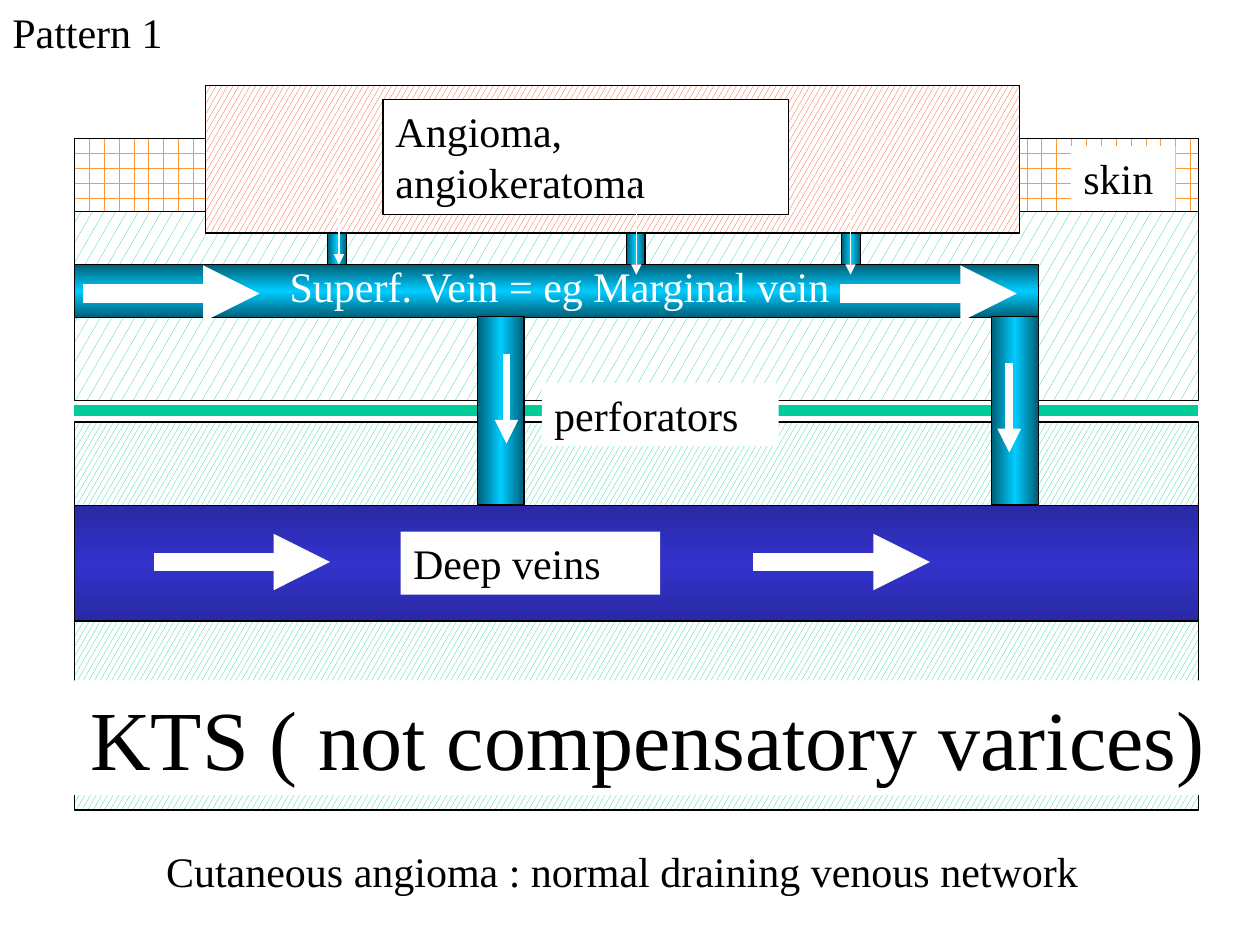
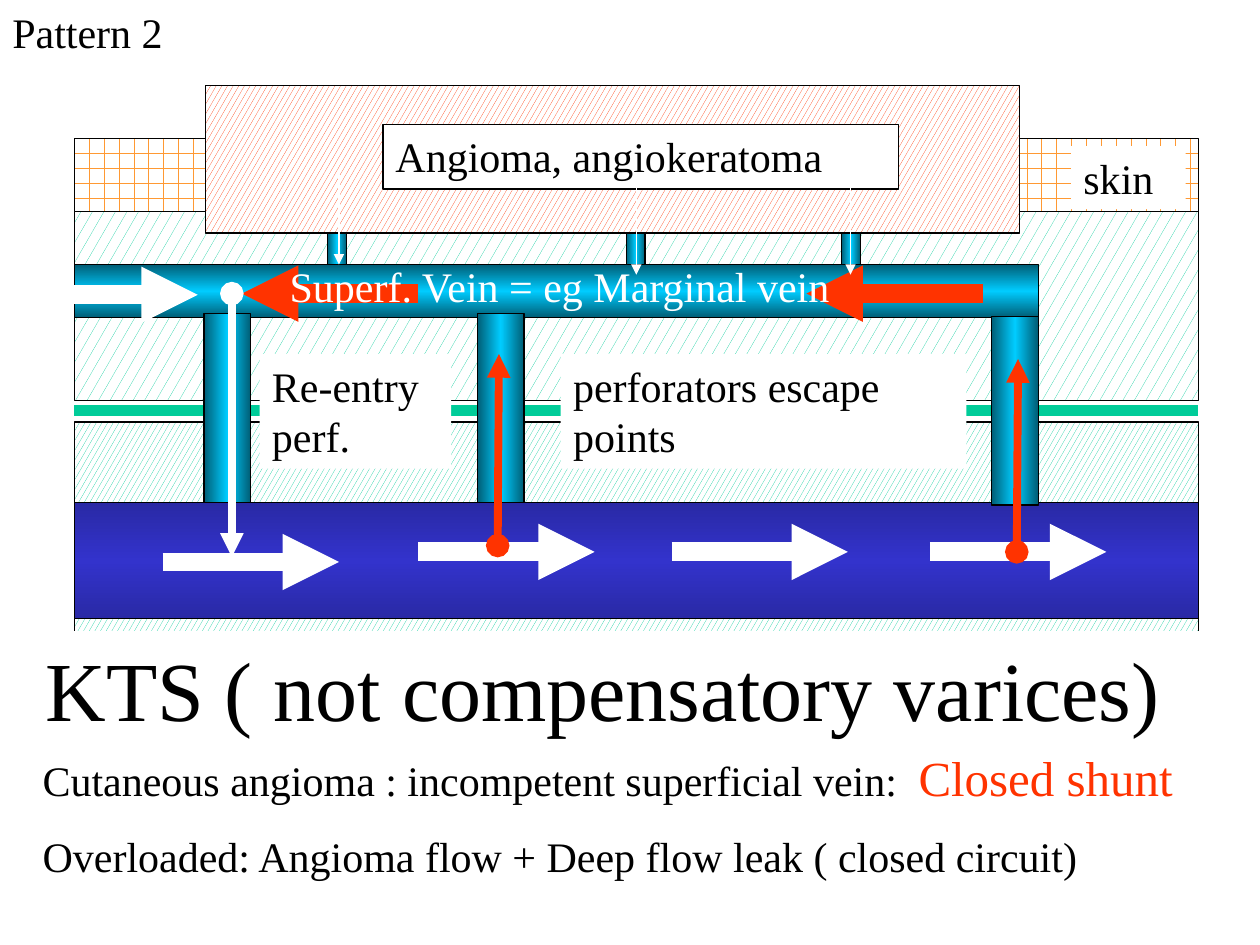
from copy import deepcopy

from lxml import etree
from pptx import Presentation
from pptx.dml.color import RGBColor
from pptx.enum.dml import MSO_PATTERN
from pptx.enum.shapes import MSO_CONNECTOR, MSO_SHAPE
from pptx.enum.text import PP_ALIGN
from pptx.oxml.ns import qn
from pptx.util import Inches, Pt

RECT = MSO_SHAPE.RECTANGLE
STRAIGHT = MSO_CONNECTOR.STRAIGHT
LARGE = MSO_PATTERN.LARGE_CONFETTI
SMALL = MSO_PATTERN.SMALL_CONFETTI
BRICK = MSO_PATTERN.HORIZONTAL_BRICK
LEFT, CENTER = PP_ALIGN.LEFT, PP_ALIGN.CENTER

BLACK = RGBColor(0x00, 0x00, 0x00)
WHITE = RGBColor(0xFF, 0xFF, 0xFF)
GREEN = RGBColor(0x00, 0xCC, 0x99)
ORANGE = RGBColor(0xFF, 0x99, 0x33)
RED = RGBColor(0xFF, 0x33, 0x00)
CYAN = RGBColor(0x00, 0xCC, 0xFF)
TEAL = RGBColor(0x00, 0x5E, 0x76)
BLUE = RGBColor(0x33, 0x33, 0xCC)
NAVY = RGBColor(0x29, 0x29, 0xA5)

FONT = "Times New Roman"
EDGE, SPAN = 0.59, 8.92      # left edge and width of the tissue layers
FLOW, THICK = 1.4, 10.75     # length and weight of the big flow arrows
VEIN_Y = 2.33                # centre of the superficial vein


# Shapes
def block(slide, x, y, w, h):
    shape = slide.shapes.add_shape(
        RECT, Inches(x), Inches(y), Inches(w), Inches(h))
    shape.shadow.inherit = False
    shape.line.color.rgb = BLACK
    shape.line.width = Pt(0.75)
    return shape


def layer(slide, x, y, w, h, kind, color):
    fill = block(slide, x, y, w, h).fill
    fill.patterned()
    fill.pattern = kind
    fill.fore_color.rgb = color
    fill.back_color.rgb = WHITE


def vein(slide, x, y, w, h, rim=TEAL, core=CYAN):
    """A tube: dark rims along its length and a bright core."""
    shape = block(slide, x, y, w, h)
    fill = shape.fill
    fill.gradient()
    fill.gradient_angle = 90 if w > h else 0
    stops = shape.element.spPr.find(qn("a:gradFill")).find(qn("a:gsLst"))
    stops.append(deepcopy(stops[0]))
    for stop, color, pos in zip(fill.gradient_stops, (rim, core, rim),
                                (0, 0.5, 1)):
        stop.color.rgb = color
        stop.position = pos


def line(slide, x1, y1, x2, y2, color, width, head=None, tail="triangle"):
    link = slide.shapes.add_connector(
        STRAIGHT, Inches(x1), Inches(y1), Inches(x2), Inches(y2))
    link.line.color.rgb = color
    link.line.width = Pt(width)
    props = link.line._get_or_add_ln()
    for tag, kind in (("a:headEnd", head), ("a:tailEnd", tail)):
        if kind:
            etree.SubElement(props, qn(tag), type=kind)
    etree.SubElement(link._element.spPr, qn("a:effectLst"))


def flow(slide, x, y, color=WHITE, run=FLOW):
    line(slide, x, y, x + run, y, color, THICK)


# Text
def label(slide, x, y, w, h, *lines, size=24, color=BLACK, fill=WHITE,
          border=False, align=LEFT):
    box = slide.shapes.add_textbox(
        Inches(x), Inches(y), Inches(w), Inches(h))
    if fill is not None:
        box.fill.solid()
        box.fill.fore_color.rgb = fill
    if border:
        box.line.color.rgb = BLACK
        box.line.width = Pt(0.75)
    frame = box.text_frame
    frame.word_wrap = True
    for i, text in enumerate(lines):
        para = frame.add_paragraph() if i else frame.paragraphs[0]
        para.text = text
        para.alignment = align
        if i:
            para.space_before = Pt(14)
        para.font.name = FONT
        para.font.size = Pt(size)
        para.font.color.rgb = color
    return frame


def title(slide, text):
    label(slide, 0, 0, 2.76, 0.5, text, fill=None)


def name_vein(slide):
    label(slide, 2.2, 2.02, 4.55, 0.5, "Superf. Vein = eg Marginal vein",
          color=WHITE, fill=None)


def banner(slide, x, y, w):
    label(slide, x, y, w, 0.91, "KTS ( not compensatory varices)",
          size=48, align=CENTER)


# Parts of the anatomy that both patterns share
def tissue(slide, deep, perf):
    """Layers and veins; deep and perf are the tops of the deep vein
    and of the middle perforator."""
    layer(slide, EDGE, 3.35, SPAN, 3.08, LARGE, GREEN)
    layer(slide, EDGE, 1.3, SPAN, 1.88, SMALL, GREEN)
    layer(slide, EDGE, 1.1, SPAN, 0.58, BRICK, ORANGE)
    vein(slide, EDGE, 2.1, 7.65, 0.42)
    vein(slide, EDGE, deep, SPAN, 0.92, NAVY, BLUE)
    line(slide, EDGE, 3.26, EDGE + SPAN, 3.26, GREEN, 6, tail=None)
    for x in (2.6, 4.97, 6.68):
        vein(slide, x, 1.68, 0.15, 0.42)
    for x, y in ((3.79, perf), (7.87, 2.51)):
        vein(slide, x, y, 0.37, 1.5)
    layer(slide, 1.63, 0.68, 6.46, 1.17, LARGE, RED)


def drains(slide):
    for x, y in ((6.75, 1.47), (2.69, 1.39), (5.05, 1.47)):
        line(slide, x, y, x, y + 0.71, WHITE, 0.75)


def normal(slide):
    tissue(slide, 4.01, 2.51)
    label(slide, 3.04, 0.79, 3.22, 0.91, "Angioma, angiokeratoma",
          border=True)
    label(slide, 3.18, 4.22, 2.06, 0.5, "Deep veins")
    label(slide, 8.5, 1.16, 0.83, 0.51, "skin")
    name_vein(slide)
    label(slide, 4.3, 3.04, 1.88, 0.5, "perforators")
    for x, y in ((6.67, VEIN_Y), (0.66, VEIN_Y), (1.22, 4.46), (5.98, 4.46)):
        flow(slide, x, y)
    for x, y in ((8.01, 2.88), (4.02, 2.81)):
        line(slide, x, y, x, y + 0.71, WHITE, 4.5)
    drains(slide)
    label(slide, 1.22, 6.66, 7.56, 0.5,
          "Cutaneous angioma : normal draining venous network")
    banner(slide, 0.28, 5.4, 9.72)
    title(slide, "Pattern 1")


def shunt(slide):
    tissue(slide, 3.99, 2.49)
    label(slide, 3.04, 0.99, 4.09, 0.51, "Angioma, angiokeratoma",
          border=True)
    label(slide, 8.5, 1.16, 0.91, 0.5, "skin")
    label(slide, 4.45, 2.81, 3.22, 0.91, "perforators escape points")
    for x in (7.8, 3.32):
        flow(slide, x, VEIN_Y, RED, -FLOW)
    for x, y in ((1.29, 4.46), (5.33, 4.38), (7.38, 4.38), (3.32, 4.38)):
        flow(slide, x, y)
    drains(slide)
    notes = label(
        slide, 0.24, 5.88, 9.73, 1.17,
        "Cutaneous angioma : incompetent superficial vein:  ",
        "Overloaded: Angioma flow + Deep flow leak ( closed circuit)")
    key = notes.paragraphs[0].add_run()
    key.text = "Closed shunt"
    key.font.size = Pt(28)
    key.font.color.rgb = RED

    # Re-entry and escape through the perforators
    vein(slide, 1.62, 2.49, 0.37, 1.5)
    name_vein(slide)
    flow(slide, EDGE, 2.34, run=0.98)
    for x1, y1, x2, y2, color in ((8.07, 4.38, 8.08, 2.85, RED),
                                  (1.84, 2.33, 1.84, 4.42, WHITE),
                                  (3.95, 4.33, 3.96, 2.81, RED)):
        line(slide, x1, y1, x2, y2, color, 4.5, head="oval")
    label(slide, 2.06, 2.81, 1.52, 0.91, "Re-entry perf.")
    title(slide, "Pattern 2")
    banner(slide, 0, 5.01, 9.57)


def main():
    deck = Presentation()
    deck.slide_width, deck.slide_height = Inches(10), Inches(7.5)
    blank = deck.slide_layouts[6]
    for draw in (normal, shunt):
        draw(deck.slides.add_slide(blank))
    deck.save("out.pptx")


if __name__ == "__main__":
    main()
